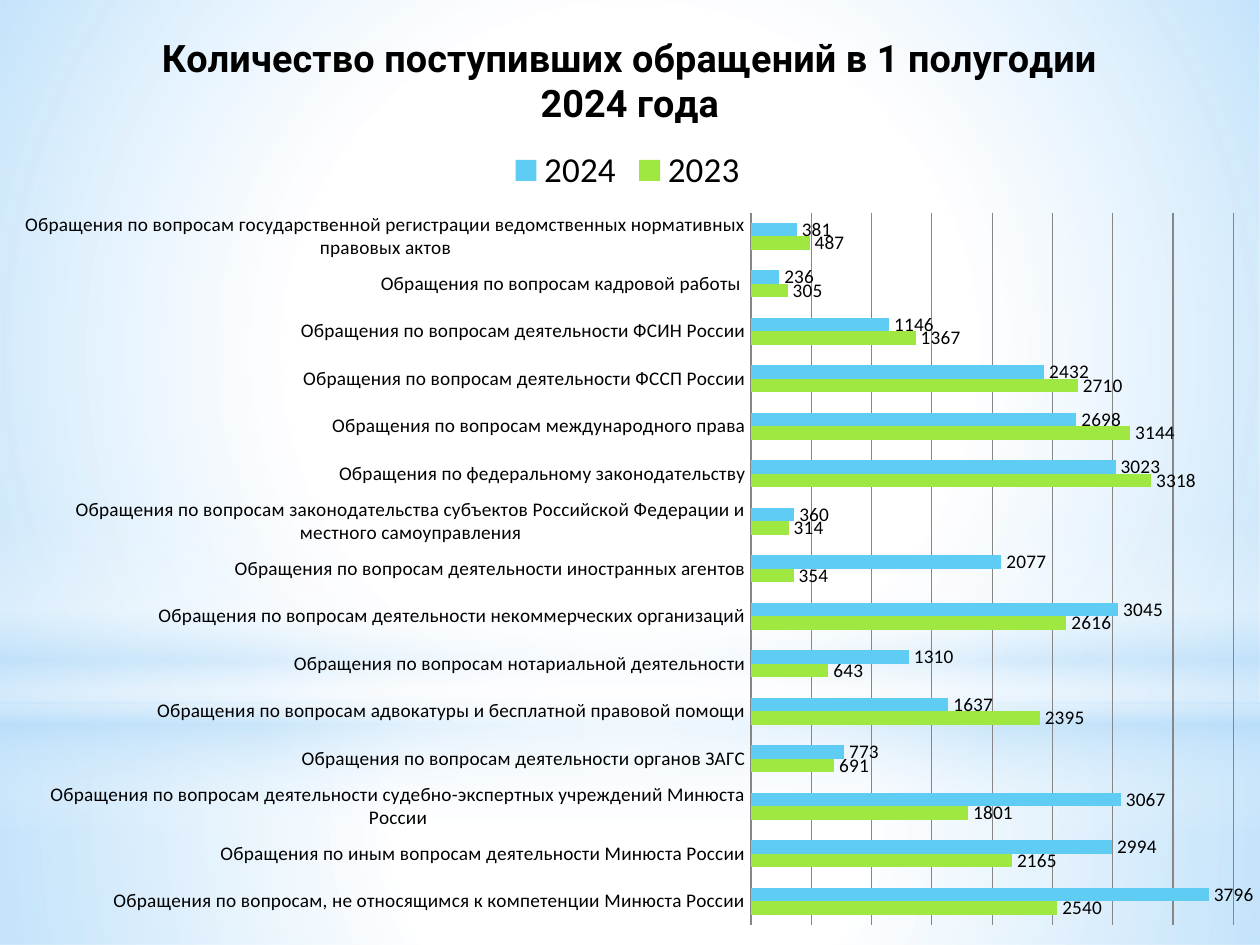
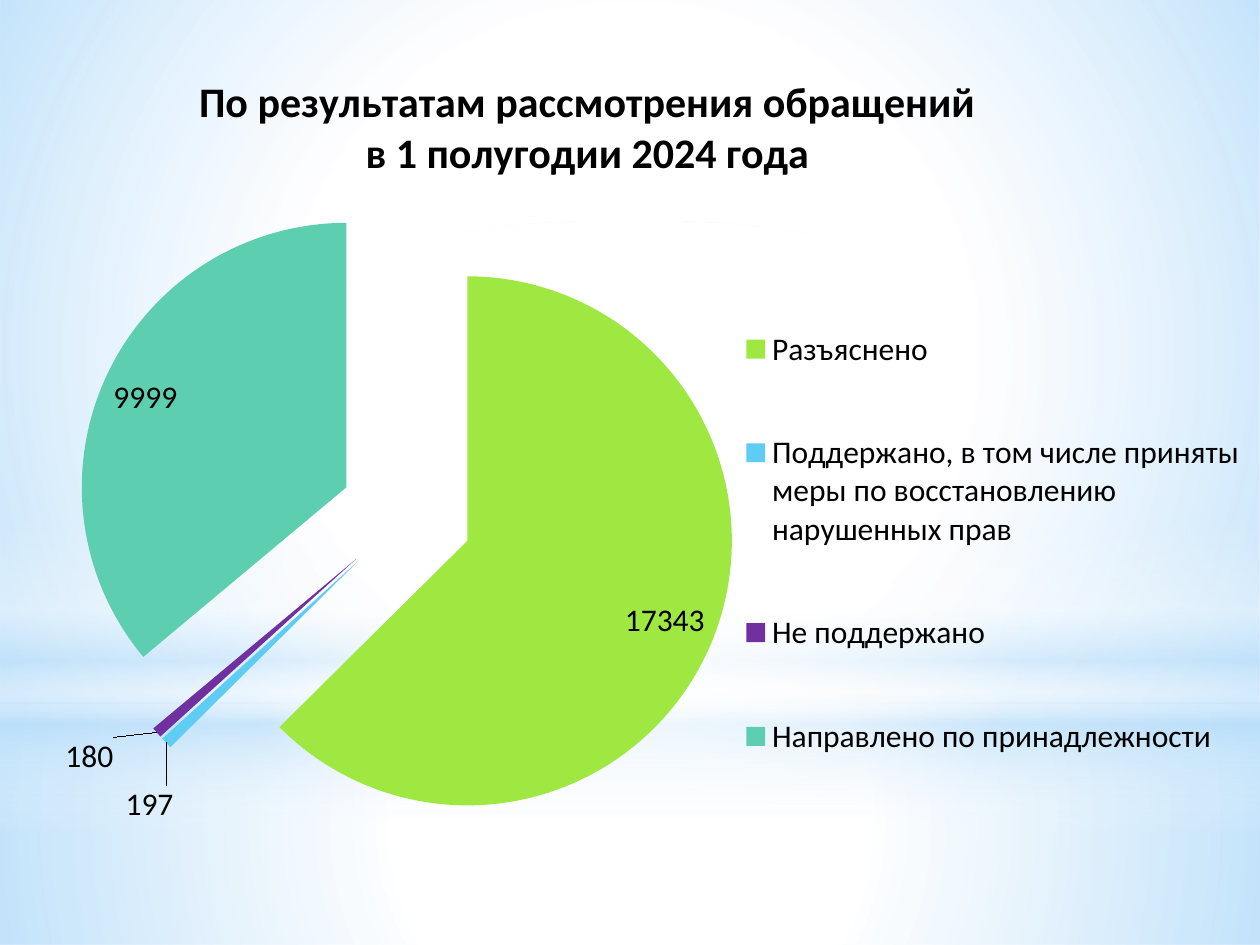
from lxml import etree
from pptx import Presentation
from pptx.chart.data import CategoryChartData
from pptx.dml.color import RGBColor
from pptx.enum import chart as charts, shapes
from pptx.oxml import parse_xml
from pptx.oxml.ns import nsdecls, qn
from pptx.util import Inches, Pt

BLACK = RGBColor(0x00, 0x00, 0x00)
GRID = RGBColor(0x86, 0x86, 0x86)
GREEN = RGBColor(0x9F, 0xE8, 0x42)
BLUE = RGBColor(0x5E, 0xCC, 0xF3)
PURPLE = RGBColor(0x70, 0x30, 0xA0)
TEAL = RGBColor(0x5D, 0xCE, 0xAF)
WHITE = RGBColor(0xFF, 0xFF, 0xFF)
SKY = RGBColor(0xB4, 0xDC, 0xFA)

RECTANGLE, OVAL = shapes.MSO_SHAPE.RECTANGLE, shapes.MSO_SHAPE.OVAL
CIRCLE = '<a:path path="circle"><a:fillToRect l="50000" t="50000" r="50000" b="50000"/></a:path>'
DOWNWARD = '<a:lin ang="5400000" scaled="0"/>'

# shape, (top, height), gradient direction, stops as (position %, colour, opacity %)
BACKDROP = [
    (RECTANGLE, (5.58, 1.92), CIRCLE, [(0, WHITE, 91), (37, WHITE, 76), (100, SKY, 79)]),
    (RECTANGLE, (0, 5.58), CIRCLE, [(0, WHITE, 89), (48, WHITE, 62), (100, SKY, 79)]),
    (RECTANGLE, (4.12, 2.5), DOWNWARD, [(0, WHITE, 0), (29, WHITE, 30), (45, SKY, 40),
                                        (55, WHITE, 26), (65, SKY, 60), (100, WHITE, 0)]),
    (OVAL, (1.75, 5.58), CIRCLE, [(0, WHITE, 100), (56, WHITE, 0)]),
]

RECEIVED_TITLE = "Количество поступивших обращений в 1 полугодии 2024 года"
# topic, 2023, 2024
RECEIVED = [
    ("Обращения по вопросам, не относящимся к компетенции Минюста России", 2540, 3796),
    ("Обращения по иным вопросам деятельности Минюста России", 2165, 2994),
    ("Обращения по вопросам деятельности судебно-экспертных учреждений Минюста России", 1801, 3067),
    ("Обращения по вопросам деятельности органов ЗАГС", 691, 773),
    ("Обращения по вопросам адвокатуры и бесплатной правовой помощи", 2395, 1637),
    ("Обращения по вопросам нотариальной деятельности", 643, 1310),
    ("Обращения по вопросам деятельности некоммерческих организаций", 2616, 3045),
    ("Обращения по вопросам деятельности иностранных агентов", 354, 2077),
    ("Обращения по вопросам законодательства субъектов Российской Федерации "
     "и местного самоуправления", 314, 360),
    ("Обращения по федеральному законодательству", 3318, 3023),
    ("Обращения по вопросам международного права", 3144, 2698),
    ("Обращения по вопросам деятельности ФССП России", 2710, 2432),
    ("Обращения по вопросам деятельности ФСИН России", 1367, 1146),
    ("Обращения по вопросам кадровой работы ", 305, 236),
    ("Обращения по вопросам государственной регистрации ведомственных нормативных "
     "правовых актов", 487, 381),
]
YEARS = [("2023", GREEN), ("2024", BLUE)]

RESULTS_TITLE = "По результатам рассмотрения обращений\nв 1 полугодии 2024 года"
INSIDE = charts.XL_LABEL_POSITION.INSIDE_END
OUTSIDE = charts.XL_LABEL_POSITION.OUTSIDE_END
# outcome, count, colour, label position, label shift
RESULTS = [
    ("Разъяснено", 17343, GREEN, INSIDE, None),
    ("Поддержано, в том числе приняты меры по восстановлению нарушенных прав",
     197, BLUE, OUTSIDE, (0.01, 0.04)),
    ("Не поддержано", 180, PURPLE, OUTSIDE, (-0.03, 0)),
    ("Направлено по принадлежности", 9999, TEAL, INSIDE, None),
]


def paint_gradient(shape, direction, stops):
    stop_xml = "".join(
        f'<a:gs pos="{position * 1000}"><a:srgbClr val="{colour}">'
        f'<a:alpha val="{opacity * 1000}"/></a:srgbClr></a:gs>'
        for position, colour, opacity in stops)
    gradient = parse_xml(f'<a:gradFill {nsdecls("a")} rotWithShape="1">'
                         f'<a:gsLst>{stop_xml}</a:gsLst>{direction}</a:gradFill>')
    shape._element.spPr.find(qn("a:prstGeom")).addnext(gradient)


def add_backdrop_slide(presentation):
    slide = presentation.slides.add_slide(presentation.slide_layouts[6])
    slide.background.fill.solid()
    slide.background.fill.fore_color.rgb = WHITE
    for kind, (top, height), direction, stops in BACKDROP:
        shape = slide.shapes.add_shape(kind, 0, Inches(top), presentation.slide_width, Inches(height))
        shape.shadow.inherit = False
        shape.line.fill.background()
        paint_gradient(shape, direction, stops)
    return slide


def place(element, *numbers, edge=True, inner=False):
    """Fix a chart part at x, y[, w, h], as fractions; edge=False shifts it instead."""
    for layout in element.findall(qn("c:layout")):
        element.remove(layout)
    layout = etree.Element(qn("c:layout"))
    manual = etree.SubElement(layout, qn("c:manualLayout"))
    settings = [("layoutTarget", "inner")] if inner else []
    settings += [("xMode", "edge"), ("yMode", "edge")] if edge else []
    settings += zip("xywh", numbers)
    for tag, value in settings:
        etree.SubElement(manual, qn(f"c:{tag}")).set("val", str(value))
    overlay, index = element.find(qn("c:overlay")), element.find(qn("c:idx"))
    if overlay is not None:
        overlay.addprevious(layout)
    elif index is not None:
        index.addnext(layout)
    else:
        element.insert(0, layout)


def style_font(font, size, name="Calibri", bold=False):
    font.size, font.name, font.bold = Pt(size), name, bold
    font.color.rgb = BLACK


def add_chart(slide, kind, data, top, title, title_size, title_font, legend_position, legend_size):
    chart = slide.shapes.add_chart(kind, 0, Inches(top), Inches(10), Inches(7.5 - top), data).chart
    style_font(chart.font, 18, "Roboto")
    chart.has_title = True
    chart.chart_title.text_frame.text = title
    for paragraph in chart.chart_title.text_frame.paragraphs:
        for run in paragraph.runs:
            style_font(run.font, title_size, title_font, True)
    chart.has_legend = True
    chart.legend.position = legend_position
    chart.legend.include_in_layout = False
    style_font(chart.legend.font, legend_size)

    no_fill = f'<c:spPr {nsdecls("c", "a")}><a:noFill/><a:ln><a:noFill/></a:ln></c:spPr>'
    chart_part = chart._chartSpace.find(qn("c:chart"))
    chart_part.addnext(parse_xml(no_fill))
    plot_area = chart_part.find(qn("c:plotArea"))
    plot_area.append(parse_xml(no_fill))
    return chart, plot_area


def add_received_slide(presentation):
    topics, *columns = zip(*RECEIVED)
    data = CategoryChartData()
    data.categories = topics
    for (year, _), values in zip(YEARS, columns):
        data.add_series(year, values)
    chart, plot_area = add_chart(
        add_backdrop_slide(presentation), charts.XL_CHART_TYPE.BAR_CLUSTERED, data, 0,
        RECEIVED_TITLE, 21.6, "Roboto", charts.XL_LEGEND_POSITION.TOP, 20)
    place(plot_area, 0.596, 0.225, 0.383, 0.754, inner=True)
    place(chart.legend._element, 0.4, 0.15)

    plot = chart.plots[0]
    plot.gap_width, plot.overlap, plot.vary_by_categories = 150, 0, False
    for series, (_, colour) in zip(plot.series, YEARS):
        series.format.fill.solid()
        series.format.fill.fore_color.rgb = colour
        labels = series.data_labels
        labels.show_value = True
        labels.position = OUTSIDE
        style_font(labels.font, 11)

    topic_axis, count_axis = chart.category_axis, chart.value_axis
    topic_axis.major_tick_mark = charts.XL_TICK_MARK.NONE
    topic_axis.format.line.color.rgb = GRID
    style_font(topic_axis.tick_labels.font, 11)
    count_axis.visible = False
    count_axis.minimum_scale, count_axis.maximum_scale, count_axis.major_unit = 0, 4000, 500
    count_axis.major_gridlines.format.line.color.rgb = GRID
    count_axis.major_gridlines.format.line.width = Pt(0.75)


def add_results_slide(presentation):
    data = CategoryChartData()
    data.categories = [outcome for outcome, *_ in RESULTS]
    data.add_series("Series 1", [count for _, count, *_ in RESULTS])
    chart, plot_area = add_chart(
        add_backdrop_slide(presentation), charts.XL_CHART_TYPE.PIE, data, 0.05,
        RESULTS_TITLE, 24, "Calibri", charts.XL_LEGEND_POSITION.RIGHT, 18)
    place(plot_area, 0.06, 0.189, 0.525, 0.707, inner=True)
    place(chart.chart_title._element, 0.155, 0.07)
    place(chart.legend._element, 0.583, 0.275, 0.41, 0.593)

    plot = chart.plots[0]
    plot.vary_by_categories = True
    series = plot.series[0]
    series.data_labels.show_value = True
    style_font(series.data_labels.font, 18)
    for number, (_, _, colour, position, shift) in enumerate(RESULTS):
        point = series.points[number]
        point.format.fill.solid()
        point.format.fill.fore_color.rgb = colour
        style_font(point.data_label.font, 18)
        point.data_label.position = position
        if shift:
            place(point.data_label._dLbl, *shift, edge=False)
    explosion = etree.Element(qn("c:explosion"), val="25")
    series._element.find(qn("c:dPt")).addprevious(explosion)


def main():
    presentation = Presentation()
    presentation.slide_width, presentation.slide_height = Inches(10), Inches(7.5)
    add_received_slide(presentation)
    add_results_slide(presentation)
    presentation.save("out.pptx")


if __name__ == "__main__":
    main()
